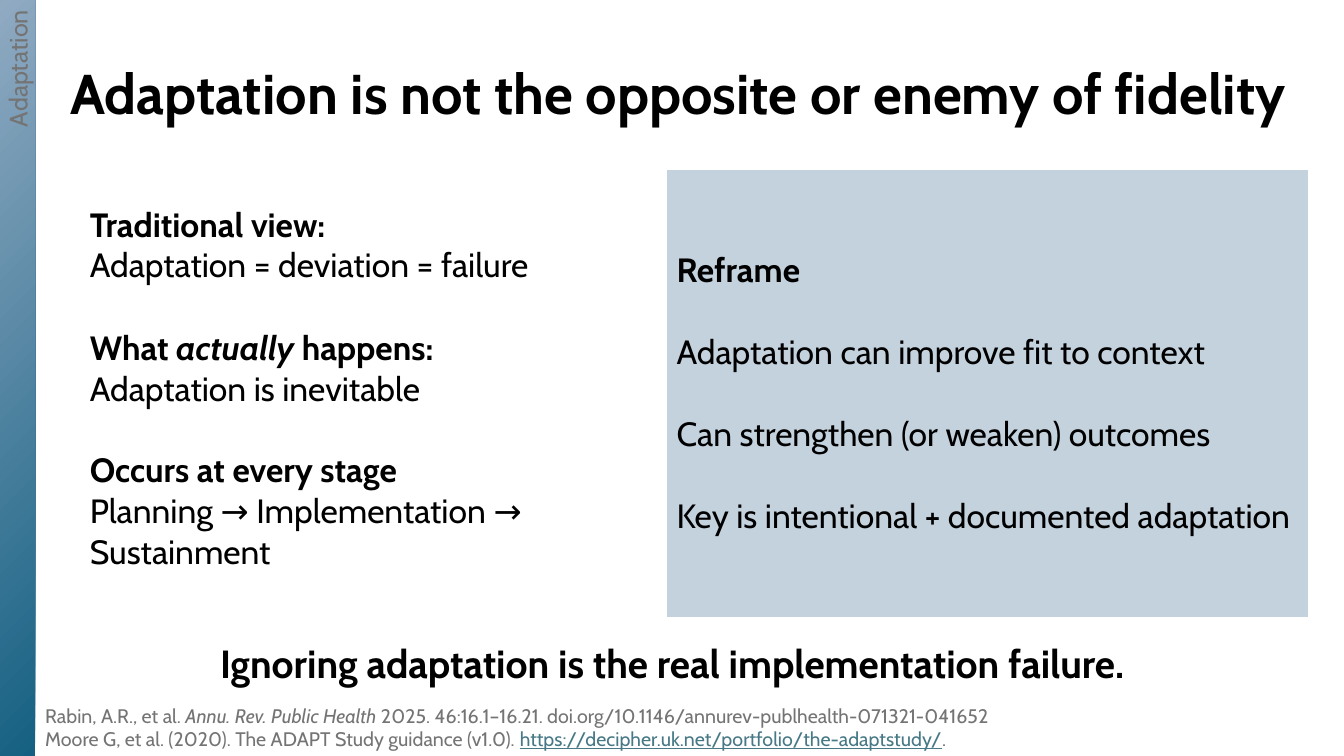
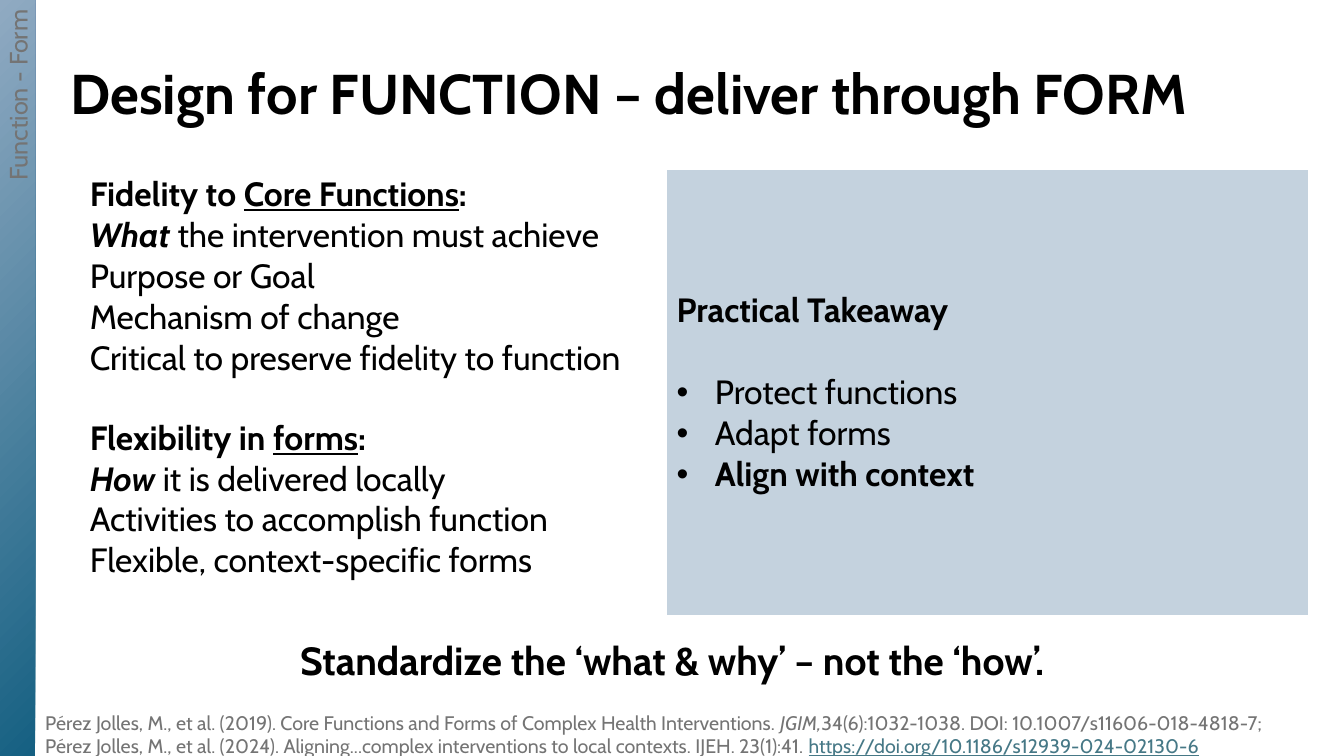
from lxml.etree import SubElement
from pptx import Presentation
from pptx.dml.color import RGBColor
from pptx.enum.shapes import MSO_SHAPE
from pptx.enum.text import MSO_ANCHOR, PP_ALIGN
from pptx.oxml.ns import qn
from pptx.util import Inches, Pt

WIDE, HIGH, BAND = 13.33, 7.5, 0.35
COLS = (5.82, 6.37)
INK, GREY, PALE, LINK = "000000", "747474", "C4D2DE", "467886"
BLEND = ((0, "90AAC2"), (100000, "156082"))
FONT, BODY, GAP = "Cabin", 24, 29.2

# Run styles: b bold, i italic, u underline, l link colour, o bullet
SLIDES = [
    {
        "title": "Adaptation is not the opposite or enemy of fidelity",
        "band": "Adaptation",
        "rows": (1.51, 2.9),
        "pad": 0.43,
        "top": [[[("Traditional view:", "b")],
                 [("Adaptation = deviation = failure", "")]]],
        "low": [[[("What ", "b"), ("actually", "bi"), (" happens:", "b")],
                 [("Adaptation is inevitable", "")]],
                [[("Occurs at every stage", "b")],
                 [("Planning → Implementation → Sustainment", "")]]],
        "side": [[[("Reframe", "b")]],
                 [[("Adaptation can improve fit to context", "")]],
                 [[("Can strengthen (or weaken) outcomes", "")]],
                 [[("Key is intentional + documented adaptation", "")]]],
        "close": ("Ignoring adaptation is the real implementation failure.", 6.29),
        "foot": 6.93,
        "refs": [[[("Rabin, A.R., et al. ", ""), ("Annu. Rev. Public Health ", "i"),
                   ("2025. 46:16.1–16.21. doi.org/10.1146/annurev-publhealth-071321-041652", "")],
                  [("Moore G, et al. (2020). The ADAPT Study guidance (v1.0). ", ""),
                   ("https://decipher.uk.net/portfolio/the-adaptstudy/", "ul"), (".", "")]]],
    },
    {
        "title": "Design for FUNCTION – deliver through FORM",
        "band": "Function - Form",
        "rows": (2.12, 2.3),
        "pad": 0.05,
        "top": [[[("Fidelity to ", "b"), ("Core Functions", "bu"), (":", "b")],
                 [("What ", "bi"), ("the intervention must achieve", "")],
                 [("Purpose or Goal", "")],
                 [("Mechanism of change", "")],
                 [("Critical to preserve fidelity to function", "")]]],
        "low": [[[("Flexibility in ", "b"), ("forms", "bu"), (":", "b")],
                 [("How", "bi"), (" it is delivered locally", "")],
                 [("Activities to accomplish function", "")],
                 [("Flexible, context-specific forms", "")]]],
        "side": [[[("Practical Takeaway", "b")]],
                 [[("Protect functions", "o")],
                  [("Adapt forms", "o")],
                  [("Align with context", "bo")]]],
        "close": ("Standardize the ‘what & why’ – not the ‘how’.", 6.26),
        "foot": 7,
        "refs": [[[("Pérez Jolles, M., et al. (2019). Core Functions and Forms of Complex Health Interventions. ", ""),
                   ("JGIM,", "i"), ("34(6):1032-1038. DOI: 10.1007/s11606-018-4818-7;", "")],
                  [("Pérez Jolles, M., et al. (2024). Aligning...complex interventions to local contexts. IJEH. 23(1):41. ", ""),
                   ("https://doi.org/10.1186/s12939-024-02130-6", "ul")]]],
    },
]
SLIDES = list(SLIDES)


def tint(code):
    return RGBColor.from_string(code)


def place(*spots):
    return [Inches(spot) for spot in spots]


def style(font, size, code, marks=""):
    font.name, font.size = FONT, Pt(size)
    font.bold, font.italic = "b" in marks, "i" in marks
    font.underline = "u" in marks
    font.color.rgb = tint(LINK if "l" in marks else code)


def bullet(para):
    props = para._p.get_or_add_pPr()
    props.set("marL", str(Inches(0.38)))
    props.set("indent", str(-Inches(0.38)))
    SubElement(props, qn("a:buFont"), typeface="Arial")
    SubElement(props, qn("a:buChar"), char="•")


def write(frame, groups, size, code, align=PP_ALIGN.LEFT):
    frame.word_wrap = True
    lines = [(line, spot == 0 and rank > 0)
             for rank, group in enumerate(groups)
             for spot, line in enumerate(group)]
    for rank, (line, apart) in enumerate(lines):
        para = frame.add_paragraph() if rank else frame.paragraphs[0]
        para.alignment = align
        if apart:
            para.space_before = Pt(GAP)
        if "o" in line[0][1]:
            bullet(para)
        for text, marks in line:
            run = para.add_run()
            run.text = text
            style(run.font, size, code, marks)


def add_title(slide, text):
    title = slide.shapes.title
    title.left, title.top, title.width, title.height = place(0.6, 0.4, 12.39, 1.11)
    frame = title.text_frame
    frame.vertical_anchor = MSO_ANCHOR.MIDDLE
    write(frame, [[[(text, "b")]]], 40, INK)
    frame.paragraphs[0].line_spacing = 0.9


def add_band(slide, text):
    band = slide.shapes.add_shape(MSO_SHAPE.RECTANGLE, *place(0, 0, BAND, HIGH))
    band.shadow.inherit = False
    band.line.fill.background()
    band.fill.gradient()
    grad = band._element.spPr.find(qn("a:gradFill"))
    for child in list(grad):
        grad.remove(child)
    stops = SubElement(grad, qn("a:gsLst"))
    for pos, code in BLEND:
        stop = SubElement(stops, qn("a:gs"), pos=str(pos))
        SubElement(stop, qn("a:srgbClr"), val=code)
    route = SubElement(grad, qn("a:path"), path="circle")
    SubElement(route, qn("a:fillToRect"), r="100000", b="100000")
    frame = band.text_frame
    frame.vertical_anchor = MSO_ANCHOR.MIDDLE
    write(frame, [[[(text, "")]]], 18, GREY, PP_ALIGN.RIGHT)
    frame._txBody.bodyPr.set("vert", "vert270")


def add_grid(slide, data):
    rows = data["rows"]
    table = slide.shapes.add_table(
        2, 2, *place(0.79, 1.68, sum(COLS), sum(rows))).table
    table.first_row = table.horz_banding = False
    for col, width in zip(table.columns, COLS):
        col.width = Inches(width)
    for row, height in zip(table.rows, rows):
        row.height = Inches(height)
    side = table.cell(0, 1)
    side.merge(table.cell(1, 1))
    parts = ((table.cell(0, 0), "top"), (table.cell(1, 0), "low"), (side, "side"))
    for cell, part in parts:
        cell.vertical_anchor = MSO_ANCHOR.MIDDLE
        cell.fill.background()
        write(cell.text_frame, data[part], BODY, INK)
    table.cell(1, 0).margin_bottom = Inches(data["pad"])
    for cell in (side, table.cell(1, 1)):
        cell.fill.solid()
        cell.fill.fore_color.rgb = tint(PALE)


def add_note(slide, spot, groups, size, code, align=PP_ALIGN.LEFT):
    box = slide.shapes.add_textbox(*place(*spot))
    write(box.text_frame, groups, size, code, align)


def main():
    deck = Presentation()
    deck.slide_width, deck.slide_height = place(WIDE, HIGH)
    for data in SLIDES:
        slide = deck.slides.add_slide(deck.slide_layouts[5])
        add_title(slide, data["title"])
        add_band(slide, data["band"])
        add_grid(slide, data)
        text, top = data["close"]
        add_note(slide, (1.69, top, 9.95, 0.57), [[[(text, "b")]]],
                 28, INK, PP_ALIGN.CENTER)
        add_note(slide, (BAND, data["foot"], WIDE - BAND, HIGH - data["foot"]),
                 data["refs"], 14, GREY)
    deck.save("out.pptx")


if __name__ == "__main__":
    main()
